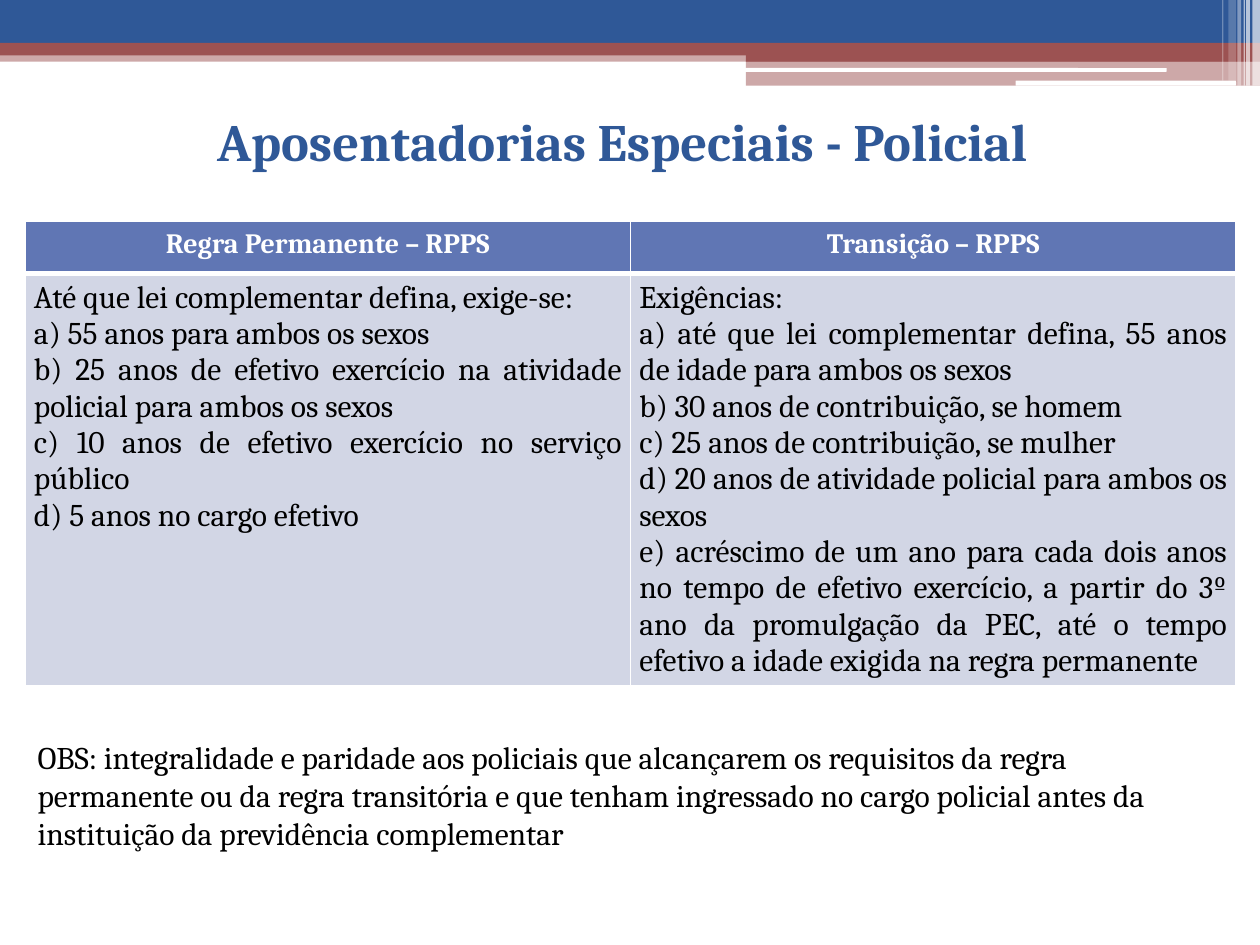
from dataclasses import dataclass

import lxml.etree
import pptx
import pptx.dml.color
import pptx.enum.shapes
import pptx.enum.text
import pptx.oxml.ns
import pptx.util

PX = 9144  # EMU per px, 100 px to the inch
FONT = "Cambria"
BLUE, RED, WHITE, BLACK = "2F5897", "9C5252", "FFFFFF", "000000"
HEADER_FILL, BODY_FILL = "6076B4", "D2D6E5"
ALIGN = pptx.enum.text.PP_ALIGN
ANCHOR = pptx.enum.text.MSO_ANCHOR
SHAPE = pptx.enum.shapes.MSO_SHAPE


@dataclass
class Bar:
    x: int
    y: int
    w: int
    h: int
    color: str
    alpha: int = 100
    rounded: bool = False


BARS = [
    # Bands across the top
    Bar(0, 40, 1000, 9, RED, 50),
    Bar(0, 0, 1000, 34, BLUE),
    Bar(0, 34, 1000, 10, RED),
    # Step on the right with its white lines
    Bar(592, 39, 408, 10, RED),
    Bar(592, 48, 408, 20, RED, 50),
    Bar(591, 54, 335, 3, WHITE, rounded=True),
    Bar(806, 64, 175, 4, WHITE, rounded=True),
    # Translucent stripes in the corner
    Bar(994, 0, 6, 68, WHITE, 65),
    Bar(989, 0, 3, 68, WHITE, 65),
    Bar(987, 0, 1, 68, WHITE, 60),
    Bar(982, 0, 3, 68, WHITE, 40),
    Bar(975, 0, 6, 64, WHITE, 20),
    Bar(970, 0, 1, 64, WHITE, 30),
]

HEADERS = ["Regra Permanente – RPPS", "Transição – RPPS"]
RULES = [
    [
        "Até que lei complementar defina, exige-se:",
        "a) 55 anos para ambos os sexos",
        "b) 25 anos de efetivo exercício na atividade policial para ambos os sexos",
        "c) 10 anos de efetivo exercício no serviço público",
        "d) 5 anos no cargo efetivo",
    ],
    [
        "Exigências:",
        "a) até que lei complementar defina, 55 anos de idade para ambos os sexos",
        "b) 30 anos de contribuição, se homem",
        "c) 25 anos de contribuição, se mulher",
        "d) 20 anos de atividade policial para ambos os sexos",
        "e) acréscimo de um ano para cada dois anos no tempo de efetivo exercício, "
        "a partir do 3º ano da promulgação da PEC, até o tempo efetivo a idade "
        "exigida na regra permanente",
    ],
]
NOTE = ("OBS: integralidade e paridade aos policiais que alcançarem os requisitos da "
        "regra permanente ou da regra transitória e que tenham ingressado no cargo "
        "policial antes da instituição da previdência complementar")


def px(n: int) -> int:
    return n * PX


def rgb(color: str) -> pptx.dml.color.RGBColor:
    return pptx.dml.color.RGBColor.from_string(color)


def write(tf, lines: list[str], *, size: int, color: str = BLACK,
          bold: bool = False, align=ALIGN.LEFT) -> None:
    tf.word_wrap = True
    for i, line in enumerate(lines):
        p = tf.paragraphs[0] if i == 0 else tf.add_paragraph()
        p.alignment = align
        r = p.add_run()
        r.text = line
        r.font.name = FONT
        r.font.size = pptx.util.Pt(size)
        r.font.bold = bold
        r.font.color.rgb = rgb(color)


def draw_bar(s, bar: Bar) -> None:
    kind = SHAPE.ROUNDED_RECTANGLE if bar.rounded else SHAPE.RECTANGLE
    sp = s.shapes.add_shape(kind, px(bar.x), px(bar.y), px(bar.w), px(bar.h))
    sp.shadow.inherit = False
    sp.line.fill.background()
    sp.fill.solid()
    sp.fill.fore_color.rgb = rgb(bar.color)
    if bar.alpha < 100:
        clr = sp.fill._xPr.find(".//" + pptx.oxml.ns.qn("a:srgbClr"))
        alpha = lxml.etree.SubElement(clr, pptx.oxml.ns.qn("a:alpha"))
        alpha.set("val", str(bar.alpha * 1000))


def set_borders(cell, **widths: int) -> None:
    """Draw white borders; keys are L, R, T, B and values are points."""
    qn = pptx.oxml.ns.qn
    tc_pr = cell._tc.get_or_add_tcPr()
    for side, width in widths.items():
        ln = lxml.etree.SubElement(tc_pr, qn(f"a:ln{side}"), w=str(pptx.util.Pt(width)))
        fill = lxml.etree.SubElement(ln, qn("a:solidFill"))
        lxml.etree.SubElement(fill, qn("a:srgbClr"), val=WHITE)


def fill_cell(cell, color: str) -> None:
    cell.margin_left = cell.margin_right = px(7)
    cell.margin_top = cell.margin_bottom = px(5)
    cell.fill.solid()
    cell.fill.fore_color.rgb = rgb(color)


def draw_table(s) -> None:
    frame = s.shapes.add_table(2, 2, px(20), px(176), px(961), px(367))
    table = frame.table
    table.horz_banding = False
    table.rows[0].height, table.rows[1].height = px(41), px(326)
    for col, (header, rules) in enumerate(zip(HEADERS, RULES)):
        top, body = table.cell(0, col), table.cell(1, col)
        set_borders(top, L=1, R=1, T=1, B=3)
        set_borders(body, L=1, R=1, T=3, B=1)
        fill_cell(top, HEADER_FILL)
        fill_cell(body, BODY_FILL)
        write(top.text_frame, [header], size=16, color=WHITE, bold=True,
              align=ALIGN.CENTER)
        write(body.text_frame, rules, size=18, align=ALIGN.JUSTIFY)


def main() -> None:
    prs = pptx.Presentation()
    prs.slide_width, prs.slide_height = px(1000), px(750)
    s = prs.slides.add_slide(prs.slide_layouts[5])

    for bar in BARS:
        draw_bar(s, bar)

    # Title, raised a little by its bottom inset
    title = s.shapes.title
    title.left, title.top, title.width, title.height = px(35), px(76), px(918), px(91)
    tf = title.text_frame
    tf.vertical_anchor = ANCHOR.MIDDLE
    tf.margin_bottom = px(25)
    write(tf, ["Aposentadorias Especiais - Policial"], size=30, color=BLUE,
          bold=True, align=ALIGN.CENTER)

    draw_table(s)

    # Note below the table
    note = s.shapes.add_textbox(px(20), px(581), px(961), px(101))
    write(note.text_frame, [NOTE], size=18)

    prs.save("out.pptx")


if __name__ == "__main__":
    main()
